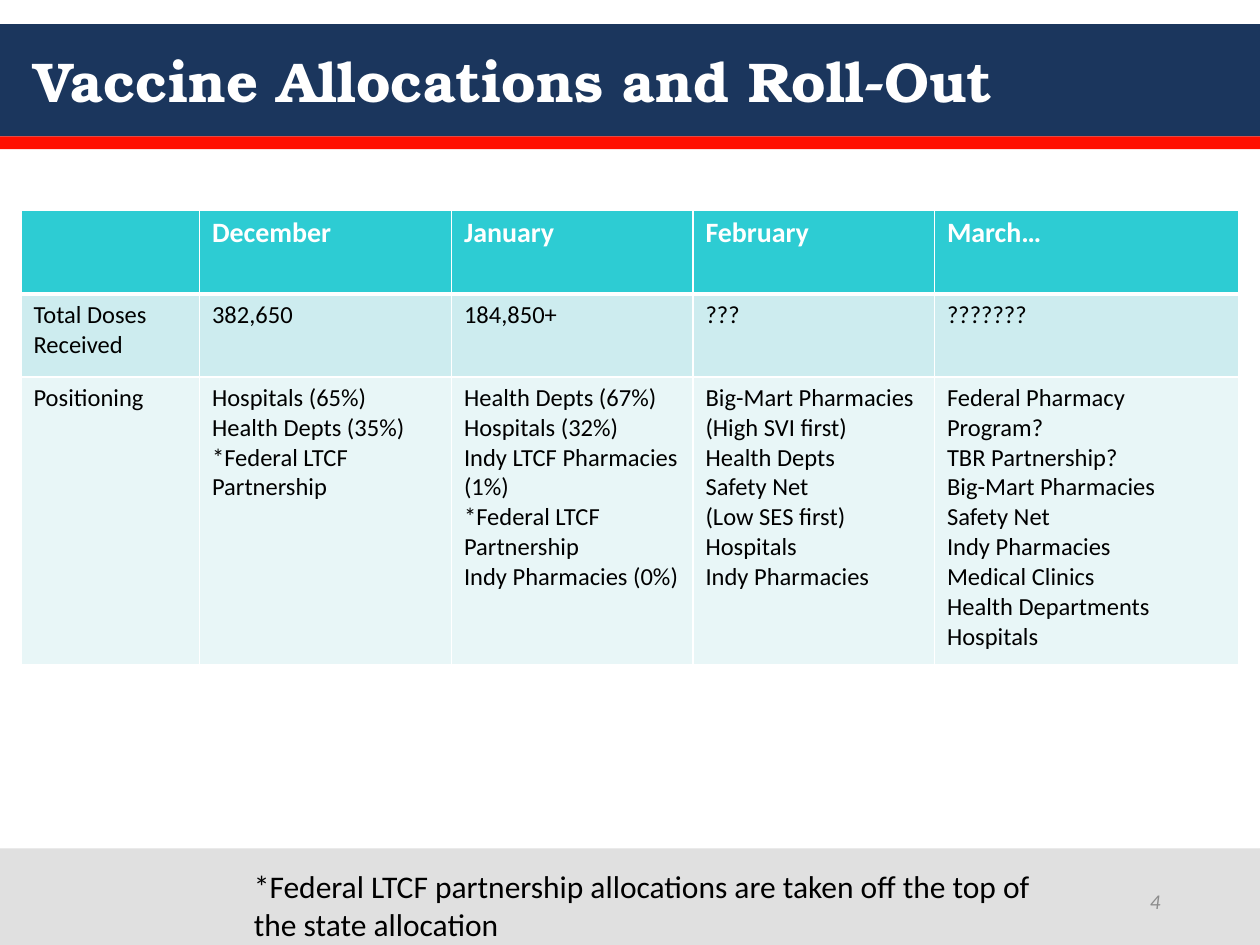
from collections import namedtuple
from dataclasses import dataclass

from lxml.etree import SubElement
from pptx import Presentation
from pptx.dml.color import RGBColor
from pptx.enum.shapes import MSO_SHAPE
from pptx.enum.text import MSO_ANCHOR, PP_ALIGN
from pptx.oxml.ns import qn
from pptx.util import Inches, Pt

Box = namedtuple("Box", "left top width height")
TextStyle = namedtuple("TextStyle", "font size color bold italic", defaults=(False, False))

GRID_COLUMNS = 120
GRID_ROWS = 90
SLIDE_WIDTH = Inches(10)
SLIDE_HEIGHT = Inches(7.5)


@dataclass(frozen=True)
class Theme:
    navy: str = "1B365D"
    red: str = "FF0F00"
    gray: str = "E0E0E0"
    white: str = "FFFFFF"
    row_fills: tuple = ("2DCCD3", "CDECEF", "E8F6F7")
    thin_border: float = 1
    header_border: float = 3
    title: TextStyle = TextStyle("TeX Gyre Bonum", 32, "FFFFFF", bold=True)
    table_header: TextStyle = TextStyle("Calibri", 16, "FFFFFF", bold=True)
    table_body: TextStyle = TextStyle("Calibri", 14, "000000")
    footnote: TextStyle = TextStyle("Calibri", 18, "000000")
    page_number: TextStyle = TextStyle("Calibri", 12, "8C8C8C", italic=True)


THEME = Theme()

COLUMN_WIDTHS = (17, 24, 23, 23, 29)
ROW_HEIGHTS = (8, 7.9, 27.4)
ALLOCATIONS = (
    ((), ("December",), ("January",), ("February",), ("March…",)),
    (("Total Doses Received",), ("382,650",), ("184,850+",), ("???",), ("???????",)),
    (
        ("Positioning",),
        ("Hospitals (65%)", "Health Depts (35%)", "*Federal LTCF Partnership"),
        ("Health Depts (67%)", "Hospitals (32%)", "Indy LTCF Pharmacies (1%)",
         "*Federal LTCF Partnership", "Indy Pharmacies (0%)"),
        ("Big-Mart Pharmacies", "(High SVI first)", "Health Depts", "Safety Net",
         "(Low SES first)", "Hospitals", "Indy Pharmacies"),
        ("Federal Pharmacy Program?", "TBR Partnership?", "Big-Mart Pharmacies",
         "Safety Net", "Indy Pharmacies", "Medical Clinics", "Health Departments",
         "Hospitals"),
    ),
)


def across(columns):
    return round(SLIDE_WIDTH * columns / GRID_COLUMNS)


def down(rows):
    return round(SLIDE_HEIGHT * rows / GRID_ROWS)


def place(box):
    return across(box.left), down(box.top), across(box.width), down(box.height)


def write_lines(text_frame, lines, style, alignment=PP_ALIGN.LEFT):
    for index, line in enumerate(lines):
        paragraph = text_frame.add_paragraph() if index else text_frame.paragraphs[0]
        paragraph.alignment = alignment
        run = paragraph.add_run()
        run.text = line
        run.font.name = style.font
        run.font.size = Pt(style.size)
        run.font.bold = style.bold
        run.font.italic = style.italic
        run.font.color.rgb = RGBColor.from_string(style.color)


def add_band(slide, box, color):
    band = slide.shapes.add_shape(MSO_SHAPE.RECTANGLE, *place(box))
    band.shadow.inherit = False
    band.fill.solid()
    band.fill.fore_color.rgb = RGBColor.from_string(color)
    band.line.fill.background()


def add_text(slide, box, text, style, alignment=PP_ALIGN.LEFT, anchor=MSO_ANCHOR.TOP):
    text_frame = slide.shapes.add_textbox(*place(box)).text_frame
    text_frame.word_wrap = True
    text_frame.vertical_anchor = anchor
    write_lines(text_frame, [text], style, alignment)


def set_borders(cell, top_width, bottom_width):
    properties = cell._tc.get_or_add_tcPr()
    widths = {"a:lnL": THEME.thin_border, "a:lnR": THEME.thin_border,
              "a:lnT": top_width, "a:lnB": bottom_width}
    for tag, width in widths.items():
        line = SubElement(properties, qn(tag), w=str(Pt(width)))
        fill = SubElement(line, qn("a:solidFill"))
        SubElement(fill, qn("a:srgbClr"), val=THEME.white)


def add_header(slide, box):
    stripe_height = 1.2
    banner = box._replace(height=box.height - stripe_height)
    stripe = box._replace(top=banner.top + banner.height, height=stripe_height)
    add_band(slide, banner, THEME.navy)
    add_band(slide, stripe, THEME.red)
    title = Box(box.left + 2, box.top, box.width - 4, banner.height)
    add_text(slide, title, "Vaccine Allocations and Roll-Out", THEME.title,
             anchor=MSO_ANCHOR.MIDDLE)


def add_allocation_table(slide, box):
    table = slide.shapes.add_table(len(ROW_HEIGHTS), len(COLUMN_WIDTHS), *place(box)).table
    for column, width in zip(table.columns, COLUMN_WIDTHS):
        column.width = across(width)
    for row, height in zip(table.rows, ROW_HEIGHTS):
        row.height = down(height)
    for row_index, contents in enumerate(ALLOCATIONS):
        style = THEME.table_body if row_index else THEME.table_header
        top_width = THEME.header_border if row_index == 1 else THEME.thin_border
        bottom_width = THEME.header_border if row_index == 0 else THEME.thin_border
        for column_index, lines in enumerate(contents):
            cell = table.cell(row_index, column_index)
            set_borders(cell, top_width, bottom_width)
            cell.fill.solid()
            cell.fill.fore_color.rgb = RGBColor.from_string(THEME.row_fills[row_index])
            write_lines(cell.text_frame, lines, style)


def add_footer(slide, box):
    add_band(slide, box, THEME.gray)
    number = Box(box.left + 84.7, box.top + 2.6, 27, 4.8)
    add_text(slide, number, "4", THEME.page_number, PP_ALIGN.RIGHT, MSO_ANCHOR.MIDDLE)
    footnote = Box(box.left + 23, box.top + 1.2, 80, 8.5)
    add_text(
        slide, footnote,
        "*Federal LTCF partnership allocations are taken off the top of the state allocation",
        THEME.footnote,
    )


def main():
    presentation = Presentation()
    presentation.slide_width = SLIDE_WIDTH
    presentation.slide_height = SLIDE_HEIGHT
    slide = presentation.slides.add_slide(presentation.slide_layouts[6])
    add_header(slide, Box(0, 2.3, GRID_COLUMNS, 11.9))
    add_allocation_table(slide, Box(2, 20, sum(COLUMN_WIDTHS), sum(ROW_HEIGHTS)))
    add_footer(slide, Box(0, 80.8, GRID_COLUMNS, 9.2))
    presentation.save("out.pptx")


if __name__ == "__main__":
    main()
